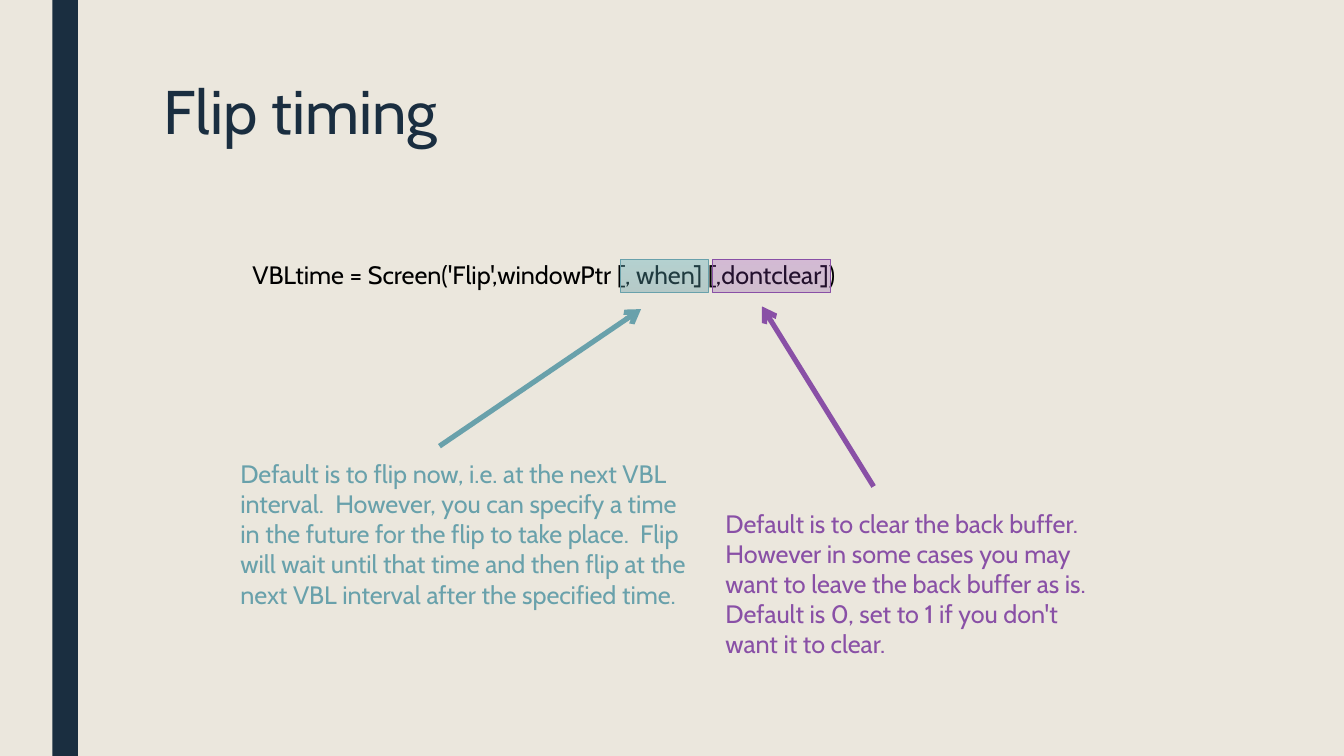
from lxml import etree
from pptx import Presentation
from pptx.dml import color
from pptx.enum import shapes, text
from pptx.oxml import ns
from pptx.util import Inches, Pt

NAVY = "1A2E40"
TEAL = "69A1AB"
PURPLE = "8950A6"
WIDE = 10
HIGH = WIDE * 9 / 16


def paint(code):
    return color.RGBColor.from_string(code)


def place(box):
    return [Inches(v) for v in box]


def write(slide, words, box, size=13.5, tint="000000", space=1):
    area = slide.shapes.add_textbox(*place(box))
    frame = area.text_frame
    frame.word_wrap = True
    frame.vertical_anchor = text.MSO_ANCHOR.TOP
    para = frame.paragraphs[0]
    para.line_spacing = space
    run = para.add_run()
    run.text = words
    run.font.name = "Cabin"
    run.font.size = Pt(size)
    run.font.color.rgb = paint(tint)


def block(slide, box):
    shape = slide.shapes.add_shape(shapes.MSO_SHAPE.RECTANGLE, *place(box))
    shape.shadow.inherit = False
    return shape


def head(slide, box):
    left, top, width, height = box
    band = block(slide, (0.39, 0, 0.19, HIGH))
    band.fill.solid()
    band.fill.fore_color.rgb = paint(NAVY)
    band.line.fill.background()
    write(slide, "Flip timing", box, size=33, tint=NAVY, space=0.89)
    write(slide, "VBLtime = Screen('Flip',windowPtr [, when] [,dontclear])",
          (left + 0.66, top + 1.32, 4.94, 0.33))


def mark(slide, box, stops, alpha, tint):
    shape = block(slide, box)
    shape.fill.gradient()
    shape.fill.gradient_angle = 90
    for stop, code in zip(shape.fill.gradient_stops, stops):
        stop.color.rgb = paint(code)
    for node in shape._element.spPr.iter(ns.qn("a:srgbClr")):
        etree.SubElement(node, ns.qn("a:alpha"), val=str(alpha * 1000))
    shape.line.color.rgb = paint(tint)
    shape.line.width = Pt(0.5)


def arrow(slide, start, end, tint):
    line = slide.shapes.add_connector(
        shapes.MSO_CONNECTOR.STRAIGHT, *place(start + end))
    line.line.color.rgb = paint(tint)
    line.line.width = Pt(2.75)
    etree.SubElement(line.line._get_or_add_ln(), ns.qn("a:tailEnd"), type="arrow")
    etree.SubElement(line._element.spPr, ns.qn("a:effectLst"))


def note(slide, box, words, tint, stops, alpha, term, start, end):
    left, top, width, height = box
    mark(slide, (left + term[0], 1.93, term[1], 0.25), stops, alpha, tint)
    arrow(slide, (left + start[0], top + start[1]),
          (left + end[0], top + end[1]), tint)
    write(slide, words, box, tint=tint)


def main():
    deck = Presentation()
    deck.slide_width, deck.slide_height = place((WIDE, HIGH))
    slide = deck.slides.add_slide(deck.slide_layouts[6])
    slide.background.fill.solid()
    slide.background.fill.fore_color.rgb = paint("EBE7DD")
    head(slide, (1.12, 0.56, 7.88, 1.22))
    note(slide, (1.69, 3.36, 3.52, 1.24),
         "Default is to flip now, i.e. at the next VBL interval.  However, "
         "you can specify a time in the future for the flip to take place.  "
         "Flip will wait until that time and then flip at the next VBL "
         "interval after the specified time.",
         TEAL, ("5A98A3", "58ACBB"), 36,
         term=(2.93, 0.65), start=(1.58, -0.04), end=(3.08, -1.06))
    note(slide, (5.3, 3.73, 3.03, 1.24),
         "Default is to clear the back buffer.  However in some cases you "
         "may want to leave the back buffer as is.  Default is 0, set to 1 "
         "if you don't want it to clear.",
         PURPLE, ("8146A3", "903BBC"), 26,
         term=(0, 0.88), start=(1.2, -0.11), end=(0.37, -1.45))
    deck.save("out.pptx")


if __name__ == "__main__":
    main()
